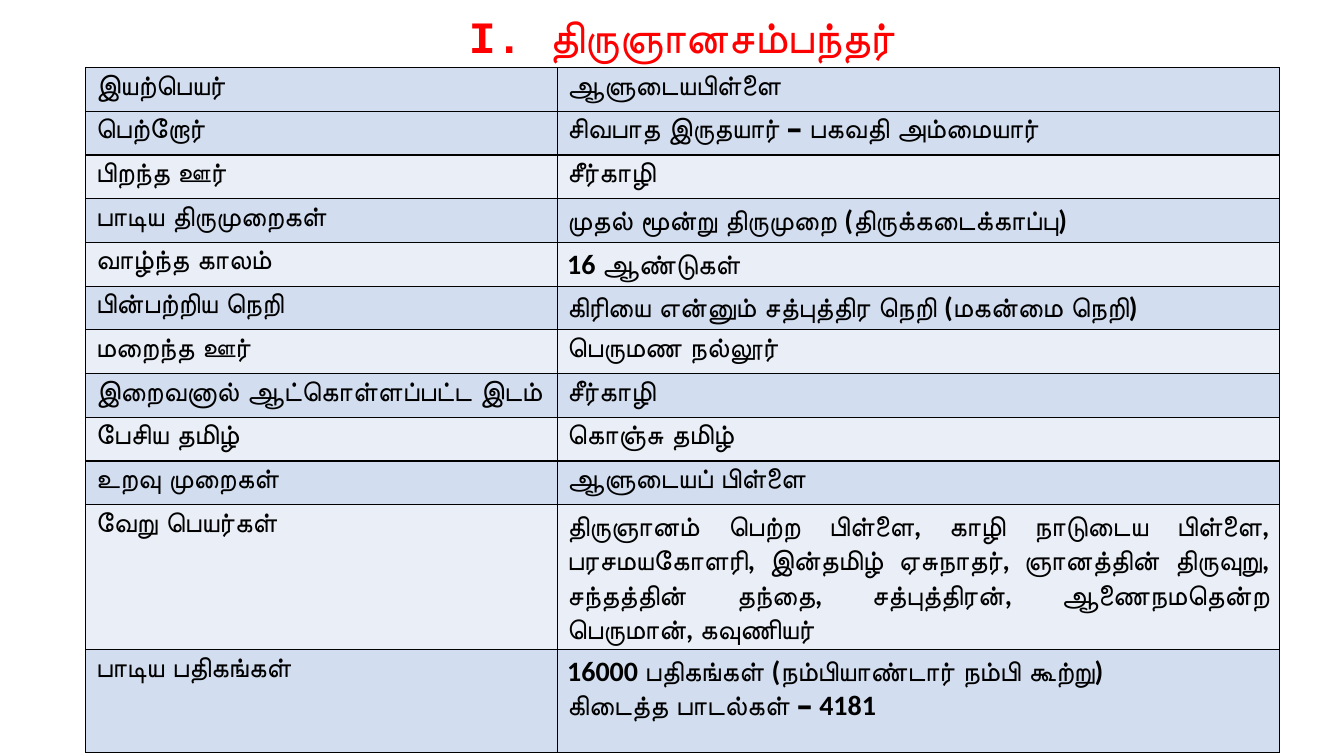
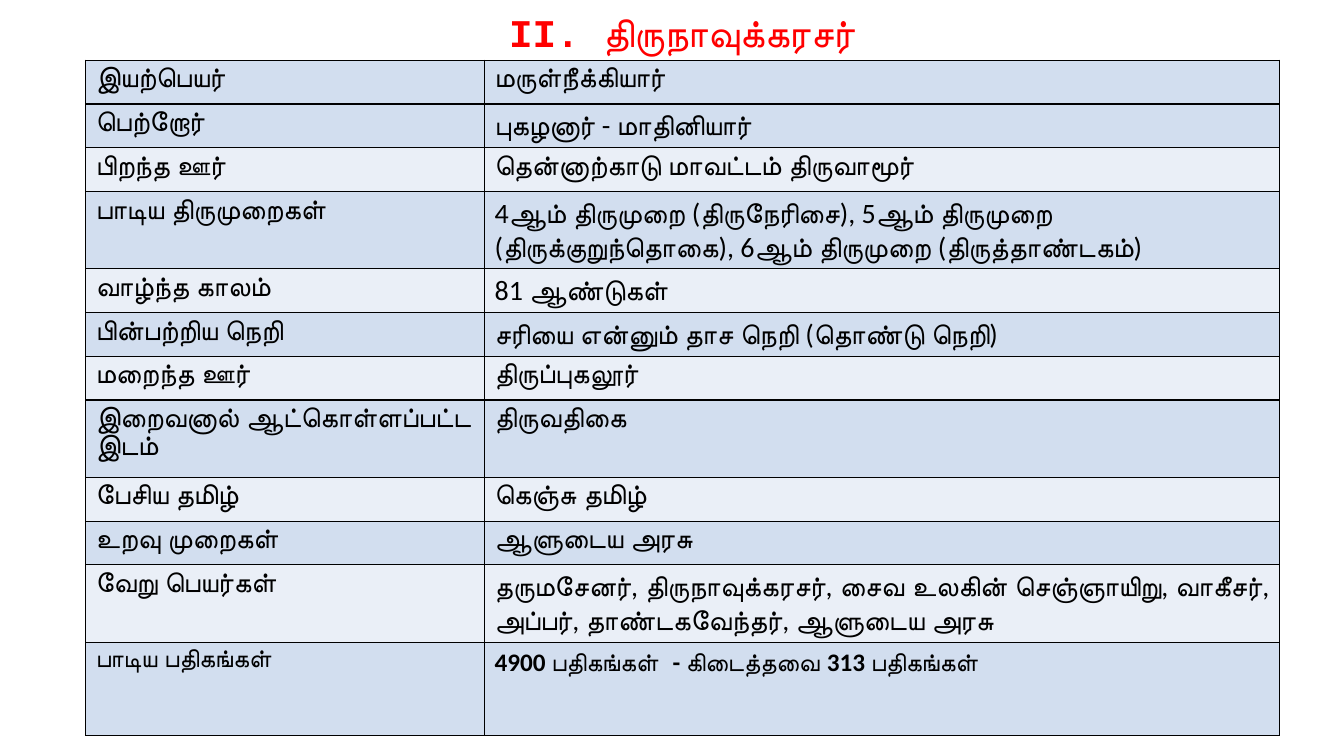
from lxml import etree
from pptx import Presentation
from pptx.dml.color import RGBColor
from pptx.enum.text import PP_ALIGN
from pptx.oxml.ns import qn
from pptx.util import Cm, Pt

CENTER = PP_ALIGN.CENTER
LEFT = PP_ALIGN.LEFT
JUSTIFY = PP_ALIGN.JUSTIFY

LABELS = [
    "இயற்பெயர்", "பெற்றோர்", "பிறந்த ஊர்", "பாடிய திருமுறைகள்",
    "வாழ்ந்த காலம்", "பின்பற்றிய நெறி", "மறைந்த ஊர்",
    "இறைவனால் ஆட்கொள்ளப்பட்ட இடம்", "பேசிய தமிழ்", "உறவு முறைகள்",
    "வேறு பெயர்கள்", "பாடிய பதிகங்கள்",
]
JUSTIFIED_LABELS = LABELS[-2:]
ROW_HEIGHT = 1.1
TWO_LINE_HEIGHT = 1.94

SAMBANDAR = {
    "title": "I. திருஞானசம்பந்தர்",
    "title_size": 32,
    "title_height": 1.7,
    "label_width": 11.88,
    "heights": {10: 3.65, 11: 2.59},
    "bold": True,
    "exceptions": {},
    "values": [
        "ஆளுடையபிள்ளை",
        "சிவபாத இருதயார் – பகவதி அம்மையார்",
        "சீர்காழி",
        "முதல் மூன்று திருமுறை (திருக்கடைக்காப்பு)",
        "16 ஆண்டுகள்",
        "கிரியை என்னும் சத்புத்திர நெறி (மகன்மை நெறி)",
        "பெருமண நல்லூர்",
        "சீர்காழி",
        "கொஞ்சு தமிழ்",
        "ஆளுடையப் பிள்ளை",
        "திருஞானம் பெற்ற பிள்ளை, காழி நாடுடைய பிள்ளை, பரசமயகோளரி, "
        "இன்தமிழ் ஏசுநாதர், ஞானத்தின் திருவுறு, சந்தத்தின் தந்தை, "
        "சத்புத்திரன், ஆணைநமதென்ற பெருமான், கவுணியர்",
        "16000 பதிகங்கள் (நம்பியாண்டார் நம்பி கூற்று)\nகிடைத்த பாடல்கள் – 4181",
    ],
}

NAVUKKARASAR = {
    "title": "II. திருநாவுக்கரசர்",
    "title_size": 28,
    "title_height": 1.52,
    "label_width": 10.05,
    "heights": {3: TWO_LINE_HEIGHT, 7: TWO_LINE_HEIGHT, 10: TWO_LINE_HEIGHT, 11: 2.36},
    "bold": False,
    "exceptions": {
        (0, 1): {"bold": True},
        (11, 0): {"bold": True, "size": Pt(18)},
        (11, 1): {"bold": True, "size": Pt(18)},
    },
    "values": [
        "மருள்நீக்கியார்",
        "புகழனார் - மாதினியார்",
        "தென்னாற்காடு மாவட்டம் திருவாமூர்",
        "4ஆம் திருமுறை (திருநேரிசை), 5ஆம் திருமுறை "
        "(திருக்குறுந்தொகை), 6ஆம் திருமுறை (திருத்தாண்டகம்)",
        "81 ஆண்டுகள்",
        "சரியை என்னும் தாச நெறி (தொண்டு நெறி)",
        "திருப்புகலூர்",
        "திருவதிகை",
        "கெஞ்சு தமிழ்",
        "ஆளுடைய அரசு",
        "தருமசேனர், திருநாவுக்கரசர், சைவ உலகின் செஞ்ஞாயிறு, வாகீசர், "
        "அப்பர், தாண்டகவேந்தர், ஆளுடைய அரசு",
        "4900 பதிகங்கள்  - கிடைத்தவை 313 பதிகங்கள்",
    ],
}


def color(value):
    return RGBColor.from_string(value)


class Deck:
    """Holds the shared style and the current slide."""

    TITLE_COLOR = "FF0000"
    TEXT_COLOR = "000000"
    BORDER_COLOR = "000000"
    DARK_BAND = "D2DEEF"
    LIGHT_BAND = "EAEFF7"
    TITLE_FONT = "Courier New"
    TABLE_FONT = "Calibri"
    TABLE_LEFT = 2.16
    TABLE_WIDTH = 30.08

    def __init__(self):
        self.presentation = Presentation()
        self.presentation.slide_width = Cm(33.87)
        self.presentation.slide_height = Cm(19.05)
        self.slide = None

    def add_slide(self):
        self.slide = self.presentation.slides.add_slide(self.presentation.slide_layouts[6])

    def add_text(self, paragraph, text, text_color, paragraph_format, font_format):
        run = paragraph.add_run()
        run.text = text
        run.font.color.rgb = color(text_color)
        for target, values in ((paragraph, paragraph_format), (run.font, font_format)):
            for name, value in values.items():
                setattr(target, name, value)

    def add_title(self, text, size, height):
        shape = self.slide.shapes.add_textbox(Cm(0.53), 0, Cm(33.32), Cm(height))
        shape.text_frame.word_wrap = True
        self.add_text(
            shape.text_frame.paragraphs[0], text, self.TITLE_COLOR,
            {"alignment": CENTER, "line_spacing": 1.07, "space_after": Pt(6)},
            {"name": self.TITLE_FONT, "size": Pt(size), "bold": True},
        )

    def add_borders(self, cell):
        properties = cell._tc.get_or_add_tcPr()
        for position, side in enumerate(("lnL", "lnR", "lnT", "lnB")):
            line = etree.Element(qn("a:" + side), w=str(Pt(1)))
            fill = etree.SubElement(line, qn("a:solidFill"))
            etree.SubElement(fill, qn("a:srgbClr"), val=self.BORDER_COLOR)
            properties.insert(position, line)

    def fill_cell(self, cell, text, band, alignment, font_format):
        cell.fill.solid()
        cell.fill.fore_color.rgb = color(band)
        self.add_borders(cell)
        frame = cell.text_frame
        for index, line in enumerate(text.split("\n")):
            paragraph = frame.add_paragraph() if index else frame.paragraphs[0]
            self.add_text(paragraph, line, self.TEXT_COLOR, {"alignment": alignment}, font_format)

    def add_profile_table(self, poet):
        heights = [poet["heights"].get(row, ROW_HEIGHT) for row in range(len(LABELS))]
        table = self.slide.shapes.add_table(
            len(LABELS), 2, Cm(self.TABLE_LEFT), Cm(poet["title_height"]),
            Cm(self.TABLE_WIDTH), Cm(sum(heights)),
        ).table
        table.first_row = False
        table.horz_banding = False
        table.columns[0].width = Cm(poet["label_width"])
        table.columns[1].width = Cm(self.TABLE_WIDTH - poet["label_width"])
        base_format = {"name": self.TABLE_FONT, "size": Pt(20), "bold": poet["bold"]}
        for row, (label, value) in enumerate(zip(LABELS, poet["values"])):
            table.rows[row].height = Cm(heights[row])
            band = self.DARK_BAND if row == 0 or row % 2 else self.LIGHT_BAND
            value_alignment = JUSTIFY if label in JUSTIFIED_LABELS else LEFT
            for column, (text, alignment) in enumerate(((label, LEFT), (value, value_alignment))):
                font_format = base_format | poet["exceptions"].get((row, column), {})
                self.fill_cell(table.cell(row, column), text, band, alignment, font_format)


def main():
    deck = Deck()
    for poet in (SAMBANDAR, NAVUKKARASAR):
        deck.add_slide()
        deck.add_title(poet["title"], poet["title_size"], poet["title_height"])
        deck.add_profile_table(poet)
    deck.presentation.save("out.pptx")


if __name__ == "__main__":
    main()
